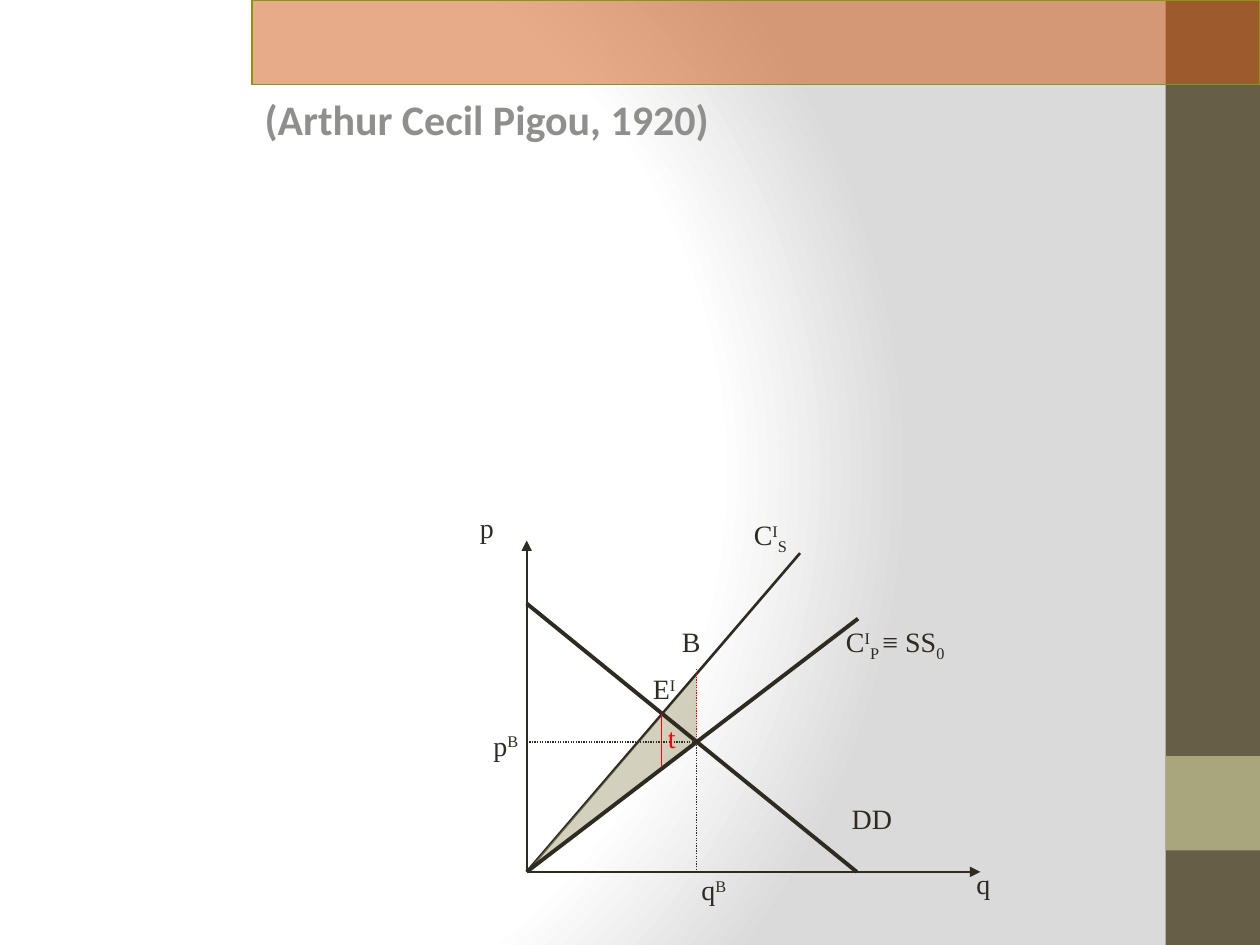
import lxml.etree
import pptx
import pptx.dml.color
import pptx.enum.dml
import pptx.enum.shapes
import pptx.enum.text
import pptx.oxml
import pptx.oxml.ns
import pptx.util
from pptx.util import Inches

INK, RED, OLIVE = "2F2B20", "FF0000", "A9A57C"
DOTTED = pptx.enum.dml.MSO_LINE.ROUND_DOT
SUP, SUB = 30000, -25000


def rgb(value):
    return pptx.dml.color.RGBColor.from_string(value)


def add_child(parent, tag, **attributes):
    child = lxml.etree.SubElement(parent, pptx.oxml.ns.qn(tag))
    for name, value in attributes.items():
        child.set(name, str(value))
    return child


def paint(shape, color, alpha=None, outline=None):
    shape.shadow.inherit = False
    shape.fill.solid()
    shape.fill.fore_color.rgb = rgb(color)
    if alpha is not None:
        srgb = shape.fill._xPr.find(".//" + pptx.oxml.ns.qn("a:srgbClr"))
        add_child(srgb, "a:alpha", val=alpha * 1000)
    if outline:
        shape.line.color.rgb = rgb(outline)
        shape.line.width = pptx.util.Pt(0.75)
    else:
        shape.line.fill.background()


def add_rect(s, left, top, width, height, color, **style):
    sp = s.shapes.add_shape(pptx.enum.shapes.MSO_SHAPE.RECTANGLE,
                            left, top, width, height)
    paint(sp, color, **style)


def add_line(s, start, end, color=INK, width=0.75, dash=None, arrow=False):
    line = s.shapes.add_connector(pptx.enum.shapes.MSO_CONNECTOR.STRAIGHT, *start, *end)
    line.line.color.rgb = rgb(color)
    line.line.width = pptx.util.Pt(width)
    if dash:
        line.line.dash_style = dash
    if arrow:
        add_child(line.line._get_or_add_ln(), "a:tailEnd", type="triangle")
    add_child(line._element.spPr, "a:effectLst")


def add_label(s, left, top, width, runs, color=INK):
    """Centred label; each run is a text with its baseline shift."""
    tf = s.shapes.add_textbox(left, top, width, Inches(0.37)).text_frame
    tf.word_wrap = True
    p = tf.paragraphs[0]
    p.alignment = pptx.enum.text.PP_ALIGN.CENTER
    p.font.name, p.font.size = "Times New Roman", pptx.util.Pt(16)
    p.font.color.rgb = rgb(color)
    for text, shift in runs:
        r = p.add_run()
        r.text = text
        if shift:
            r.font._element.set("baseline", str(shift))


def set_background(s):
    """Circular gradient, white at the left and grey at the right."""
    s.background.fill.gradient()
    grad = s.background._cSld.find(".//" + pptx.oxml.ns.qn("a:gradFill"))
    for child in list(grad):
        grad.remove(child)
    stops = add_child(grad, "a:gsLst")
    for position, color in [(0, "FFFFFF"), (75, "FFFFFF"), (100, "DADADA")]:
        stop = add_child(stops, "a:gs", pos=position * 1000)
        add_child(stop, "a:srgbClr", val=color)
    circle = add_child(grad, "a:path")
    circle.set("path", "circle")
    add_child(circle, "a:fillToRect", l=20000, t=50000, r=100000, b=50000)


def add_side_band(s, left, top, width, height):
    add_rect(s, left, top, width, height, "675E47")
    add_rect(s, left, top + Inches(6), width, width, OLIVE)


def set_subtitle(s, left, top, width, height):
    s.shapes.title._element.getparent().remove(s.shapes.title._element)
    sp = s.placeholders[1]
    sp.left, sp.top, sp.width, sp.height = left, top, width, height
    sp.text_frame.text = "(Arthur Cecil Pigou, 1920)"
    p = sp.text_frame.paragraphs[0]
    p.alignment = pptx.enum.text.PP_ALIGN.LEFT
    p.line_spacing = 0.85
    p.space_before = pptx.util.Pt(0)
    p.font.name, p.font.size, p.font.bold = "Calibri", pptx.util.Pt(24), True
    p.font.color.rgb = rgb("8F8F8D")


def add_diagram(s, left, top, width, height):
    """Supply and demand diagram whose axes fill the box."""
    def at(q, p):
        return left + Inches(q), top + height - Inches(p)

    origin, q_axis, p_axis = at(0, 0), (left + width, top + height), (left, top)
    equilibrium, social = at(1.35, 1.03), at(1.35, 1.56)

    add_line(s, origin, at(2.17, 2.53), width=1.5)
    builder = s.shapes.build_freeform(*origin, scale=1.0)
    builder.add_line_segments([social, equilibrium])
    paint(builder.convert_to_shape(), OLIVE, alpha=50)

    add_line(s, at(1.35, 1.61), equilibrium, RED, dash=DOTTED)
    add_line(s, origin, q_axis, width=1, arrow=True)
    add_line(s, origin, p_axis, width=1, arrow=True)
    add_line(s, at(0, 2.13), at(2.62, 0), width=2.25)
    add_line(s, origin, at(2.63, 2.01), width=2.25)
    add_line(s, at(1.07, 1.25), at(1.07, 0.84), RED)
    add_line(s, equilibrium, at(1.35, 0), dash=DOTTED)
    add_line(s, at(0, 1.03), equilibrium, dash=DOTTED)

    labels = [
        (-0.47, 2.92, 0.31, [("p", 0)], INK),
        (3.47, 0.09, 0.31, [("q", 0)], INK),
        (1.13, 2.01, 0.35, [("B", 0)], INK),
        (1.28, 2.86, 1.34, [("C", 0), ("I", SUP), ("S ", SUB)], INK),
        (2.26, 2.01, 1.33,
         [("C", 0), ("I", SUP), ("P ", SUB), ("≡ SS", 0), ("0", SUB)], INK),
        (2.33, 0.61, 0.82, [("DD", 0)], INK),
        (0.86, 1.25, 0.58, [("t", 0)], RED),
        (0.66, 1.64, 0.86, [("E", 0), ("I", SUP)], INK),
        (1.15, 0.04, 0.67, [("q", 0), ("B", SUP)], INK),
        (-0.5, 1.19, 0.67, [("p", 0), ("B", SUP)], INK),
    ]
    for q, p, label_width, runs, color in labels:
        add_label(s, *at(q, p), Inches(label_width), runs, color)


def main():
    prs = pptx.Presentation()
    prs.slide_width, prs.slide_height = Inches(10), Inches(7.5)
    s = prs.slides.add_slide(prs.slide_layouts[0])
    set_background(s)
    add_side_band(s, Inches(9.25), 0, Inches(0.75), prs.slide_height)
    set_subtitle(s, Inches(2), Inches(0.75), Inches(8), Inches(3.16))
    add_diagram(s, Inches(4.18), Inches(4.29), Inches(3.6), Inches(2.63))
    add_rect(s, Inches(2), 0, Inches(8), Inches(0.67), "D25814",
             alpha=50, outline="849A0A")
    prs.save("out.pptx")


if __name__ == "__main__":
    main()
